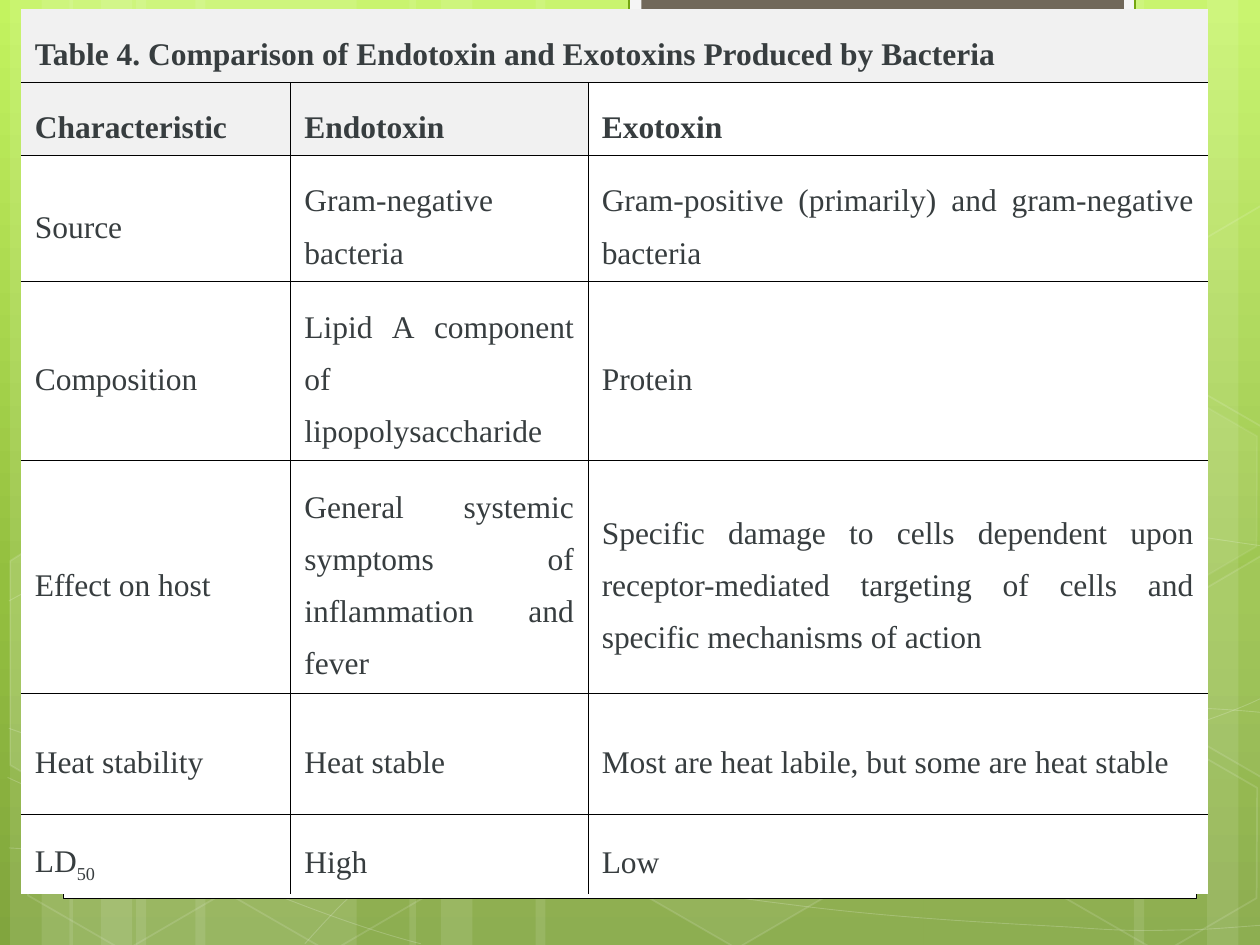
from copy import deepcopy
from math import cos, radians, sin

from lxml import etree
from pptx import Presentation
from pptx.dml.color import RGBColor
from pptx.enum.shapes import MSO_SHAPE
from pptx.enum.text import MSO_ANCHOR, PP_ALIGN
from pptx.oxml.ns import qn
from pptx.util import Inches, Pt

RECTANGLE = MSO_SHAPE.RECTANGLE
HEXAGON = MSO_SHAPE.HEXAGON
MIDDLE = MSO_ANCHOR.MIDDLE
JUSTIFY = PP_ALIGN.JUSTIFY

GRID_COLUMNS, GRID_ROWS = 10, 7.5
TILT = 30
WHITE, BLACK, INK, HEADER_GRAY = "FFFFFF", "000000", "373D3F", "F1F1F1"
FONT = "Times New Roman"
BACKDROP = [("C3F35F", 0), ("93BF3F", 0.62), ("81A53E", 1)]

BARS = [(1.08, 1.75), (0.08, 0.5), (0.33, 0.83), (1.55, 1.75), (0.55, 0.5),
        (0.8, 0.83), (7.33, 1.75), (9.58, 0.5), (9, 0.83), (4.25, 3.08),
        (3.25, 0.5), (3.5, 0.83)]

CURVES = [
    [(0.07, 6.73), (0.61, 6.76), (1.15, 6.79), (1.9, 6.78), (2.65, 6.77),
     (3.58, 6.75), (4.58, 6.65), (5.58, 6.55), (7, 6.36), (7.92, 6.17),
     (8.83, 5.98), (9.77, 5.68), (10.07, 5.51)],
    [(0.07, 4.77), (0.36, 4.61), (0.65, 4.46), (1.21, 4.31), (1.78, 4.16),
     (2.59, 3.94), (3.47, 3.87), (4.36, 3.8), (5.44, 3.79), (6.54, 3.87),
     (7.64, 3.95), (9.47, 4.26), (10.07, 4.34)],
    [(0.06, 6.17), (1.27, 6.72), (2.47, 7.27), (3.34, 7.49)],
    [(0.07, 5.78), (0.38, 5.89), (0.7, 6), (1.28, 6.16), (1.86, 6.31),
     (2.73, 6.56), (3.57, 6.73), (4.4, 6.9), (5.45, 7.08), (6.28, 7.18),
     (7.11, 7.29), (8, 7.33), (8.53, 7.36), (9.05, 7.4), (9.19, 7.38),
     (9.45, 7.38), (9.71, 7.37), (9.89, 7.35), (10.07, 7.34)],
    [(2.42, 7.49), (2.6, 7.29), (2.78, 7.09), (3.02, 6.91), (3.26, 6.73),
     (3.6, 6.53), (3.88, 6.39), (4.16, 6.25), (4.33, 6.19), (4.7, 6.09),
     (5.06, 5.99), (5.73, 5.85), (6.08, 5.78), (6.44, 5.71), (6.49, 5.71),
     (6.8, 5.69), (7.11, 5.66), (7.6, 5.63), (7.94, 5.62), (8.29, 5.61),
     (8.86, 5.62), (8.86, 5.62), (9.08, 5.62), (9.31, 5.62), (9.53, 5.62),
     (9.71, 5.63), (9.88, 5.64), (10.06, 5.66)],
]

HEXAGONS = [(4.97, 5.89, 6, 12), (0.11, 5.91, 0, 12), (0.14, 3.12, 7, 8),
            (1.74, 5.92, 0, 12), (8.34, 5.93, 0, 12), (8.34, 3.14, 7, 8)]

CUT_HEXAGONS = [
    ((0.36, 5.35), [(0.08, 4.45), (0.19, 4.38), (0.96, 4.82), (0.95, 5.7),
                    (0.2, 6.14), (0.08, 6.07)], 10),
    ((9.85, 5.2), [(9.26, 4.85), (10.01, 4.41), (10.09, 4.46), (10.09, 6.13),
                   (10.02, 6.17), (9.26, 5.73)], 4),
    ((9.85, 2.41), [(9.26, 2.07), (10.01, 1.63), (10.1, 1.68), (10.09, 3.35),
                    (10.02, 3.39), (9.26, 2.95)], 0),
]

COLUMN_WIDTHS = [2.14, 2.36, 4.92]
ROW_HEIGHTS = [0.58, 0.58, 1, 1.42, 1.85, 0.96, 0.53]
TOXINS = [
    ["Table 4. Comparison of Endotoxin and Exotoxins Produced by Bacteria", "", ""],
    ["Characteristic", "Endotoxin", "Exotoxin"],
    ["Source", "Gram-negative bacteria",
     "Gram-positive (primarily) and gram-negative bacteria"],
    ["Composition", "Lipid A component of lipopolysaccharide", "Protein"],
    ["Effect on host", "General systemic symptoms of inflammation and fever",
     "Specific damage to cells dependent upon receptor-mediated targeting "
     "of cells and specific mechanisms of action"],
    ["Heat stability", "Heat stable",
     "Most are heat labile, but some are heat stable"],
    [("LD", "50"), "High", "Low"],
]


def color(hex_value):
    return RGBColor.from_string(hex_value)


def paint(target, hex_value, alpha=100):
    if not alpha:
        target.background()
        return
    target.solid()
    target.fore_color.rgb = color(hex_value)
    if alpha < 100:
        tint = target._xPr.find(".//" + qn("a:srgbClr"))
        etree.SubElement(tint, qn("a:alpha")).set("val", str(alpha * 1000))


def style(shape, fill=WHITE, fill_alpha=100, line=WHITE, line_alpha=0, width=1):
    shape.shadow.inherit = False
    paint(shape.fill, fill, fill_alpha)
    paint(shape.line.fill, line, line_alpha)
    if line_alpha:
        shape.line.width = Pt(width)


def grid_point(box, column, row):
    left, top, width, height = box
    return (round(left + width * column / GRID_COLUMNS),
            round(top + height * row / GRID_ROWS))


def place(slide, box, kind, column, row, columns, rows):
    left, top = grid_point(box, column, row)
    right, bottom = grid_point(box, column + columns, row + rows)
    return slide.shapes.add_shape(kind, left, top, right - left, bottom - top)


def outline(slide, box, points, closed):
    first, *rest = [grid_point(box, *point) for point in points]
    builder = slide.shapes.build_freeform(*first, scale=1.0)
    builder.add_line_segments(rest, close=closed)
    return builder.convert_to_shape()


def bend(shape):
    segments = shape._element.findall(".//" + qn("a:lnTo"))
    for start in range(0, len(segments), 3):
        curve, *others = segments[start:start + 3]
        curve.tag = qn("a:cubicBezTo")
        for segment in others:
            curve.append(segment[0])
            segment.getparent().remove(segment)
    return shape


def turn_back(point, center):
    across, down = point[0] - center[0], point[1] - center[1]
    cosine, sine = cos(radians(TILT)), sin(radians(TILT))
    return (center[0] + across * cosine + down * sine,
            center[1] - across * sine + down * cosine)


def fill_backdrop(slide):
    fill = slide.background.fill
    fill.gradient()
    fill.gradient_angle = 270
    stop_list = slide._element.find(".//" + qn("a:gsLst"))
    stop_list.insert(1, deepcopy(stop_list[0]))
    for stop, (hex_value, position) in zip(fill.gradient_stops, BACKDROP):
        stop.color.rgb = color(hex_value)
        stop.position = position


def draw_scenery(slide, box):
    for column, columns in BARS:
        style(place(slide, box, RECTANGLE, column, 0, columns, GRID_ROWS), fill_alpha=10)
    for knots in CURVES:
        style(bend(outline(slide, box, knots, False)),
              fill_alpha=0, line_alpha=20, width=0.5)
    for column, row, fill_alpha, line_alpha in HEXAGONS:
        hexagon = place(slide, box, HEXAGON, column, row, 1.75, 1.52)
        hexagon.adjustments[0] = 0.285
        hexagon.rotation = TILT
        style(hexagon, fill_alpha=fill_alpha, line_alpha=line_alpha)
    for center, corners, fill_alpha in CUT_HEXAGONS:
        level = [turn_back(corner, center) for corner in corners]
        cut_hexagon = outline(slide, box, level, True)
        cut_hexagon.rotation = TILT
        style(cut_hexagon, fill_alpha=fill_alpha, line_alpha=12)


def draw_panel(slide, box):
    style(place(slide, box, RECTANGLE, 0.5, 0.36, 9, 6.77),
          line=BLACK, line_alpha=100, width=0.5)
    style(place(slide, box, RECTANGLE, 4.99, -0.02, 4.02, 0.76),
          fill="F5F5F5", line="74A510", line_alpha=100, width=1.25)
    style(place(slide, box, RECTANGLE, 5.09, -0.02, 3.83, 0.68), fill="71685A")


def rule_cell(cell, row, column):
    last_row, last_column = len(ROW_HEIGHTS) - 1, len(COLUMN_WIDTHS) - 1
    edges = {"a:lnL": row > 0 and column > 0,
             "a:lnR": row > 0 and column < last_column,
             "a:lnT": row > 0,
             "a:lnB": row < last_row}
    properties = cell._tc.get_or_add_tcPr()
    for tag, ruled in edges.items():
        edge = etree.SubElement(properties, qn(tag), w=str(Pt(0.25)))
        if ruled:
            ink = etree.SubElement(edge, qn("a:solidFill"))
            etree.SubElement(ink, qn("a:srgbClr"), val=BLACK)
        else:
            etree.SubElement(edge, qn("a:noFill"))


def write_cell(cell, content, bold):
    cell.vertical_anchor = MIDDLE
    cell.margin_left = cell.margin_right = Inches(0.11)
    cell.margin_top = cell.margin_bottom = Inches(0.08)
    paragraph = cell.text_frame.paragraphs[0]
    paragraph.alignment = JUSTIFY
    paragraph.line_spacing = 1.5
    parts = (content,) if isinstance(content, str) else content
    for index, part in enumerate(parts):
        run = paragraph.add_run()
        run.text = part
        run.font.name, run.font.size, run.font.bold = FONT, Pt(18), bold
        run.font.color.rgb = color(INK)
        if index:
            run.font._element.set("baseline", "-25000")


def draw_toxin_table(slide, box):
    width, height = box[2:]
    table = slide.shapes.add_table(len(ROW_HEIGHTS), len(COLUMN_WIDTHS), *box).table
    table.first_row = table.horz_banding = False
    for column, share in zip(table.columns, COLUMN_WIDTHS):
        column.width = round(width * share / sum(COLUMN_WIDTHS))
    for row, share in zip(table.rows, ROW_HEIGHTS):
        row.height = round(height * share / sum(ROW_HEIGHTS))
    table.cell(0, 0).merge(table.cell(0, len(COLUMN_WIDTHS) - 1))
    for row, contents in enumerate(TOXINS):
        for column, content in enumerate(contents):
            cell = table.cell(row, column)
            rule_cell(cell, row, column)
            shaded = row == 0 or (row == 1 and column < 2)
            paint(cell.fill, HEADER_GRAY if shaded else WHITE)
            if content:
                write_cell(cell, content, row < 2)


def main():
    deck = Presentation()
    deck.slide_width, deck.slide_height = Inches(GRID_COLUMNS), Inches(GRID_ROWS)
    slide = deck.slides.add_slide(deck.slide_layouts[6])
    page = (0, 0, deck.slide_width, deck.slide_height)
    fill_backdrop(slide)
    draw_scenery(slide, page)
    draw_panel(slide, page)
    draw_toxin_table(slide, (*grid_point(page, GRID_COLUMNS / 60, GRID_ROWS / 100),
                             *grid_point(page, sum(COLUMN_WIDTHS), sum(ROW_HEIGHTS))))
    deck.save("out.pptx")


if __name__ == "__main__":
    main()
